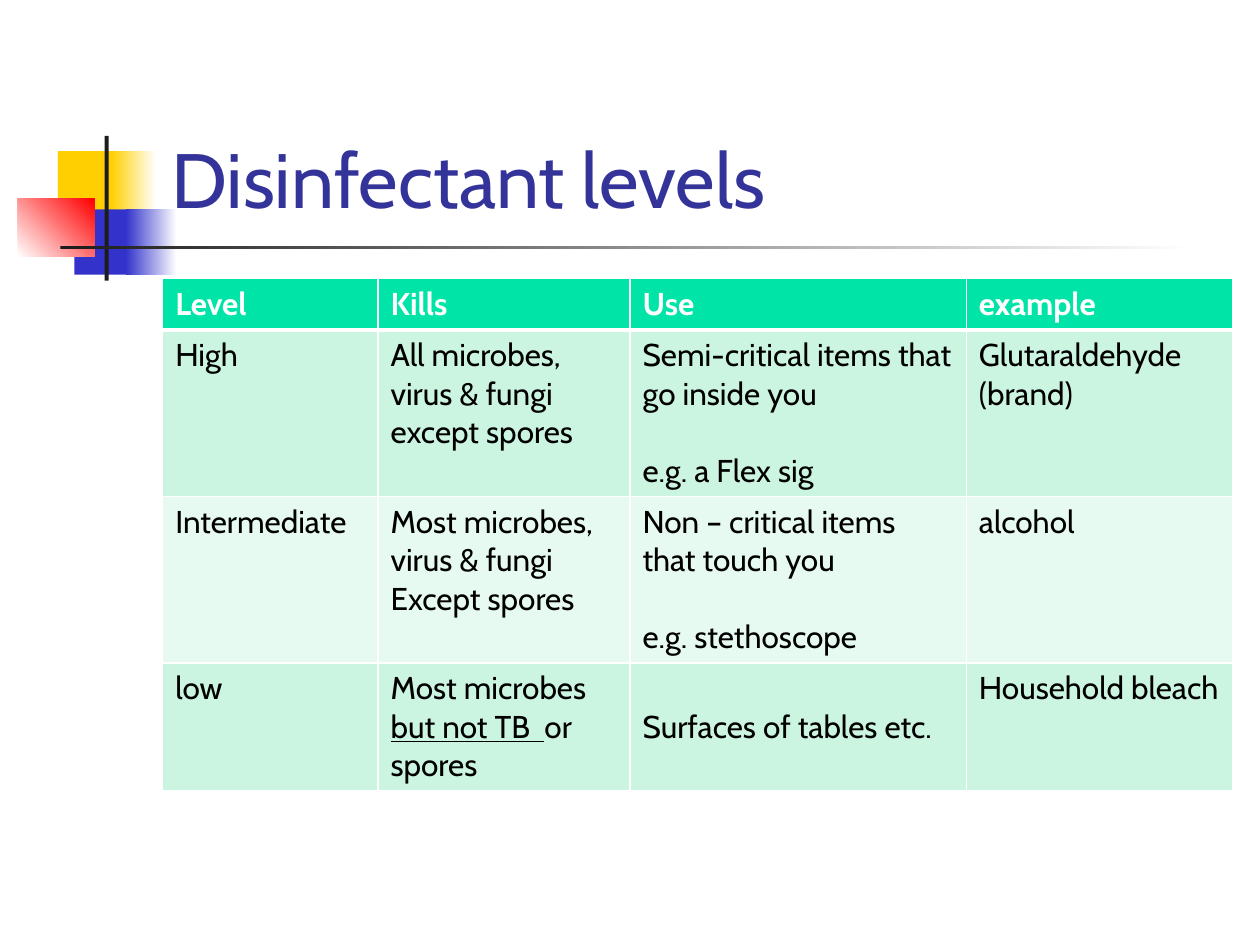
from lxml.etree import SubElement
from pptx import Presentation
from pptx.dml.color import RGBColor
from pptx.enum.shapes import MSO_SHAPE
from pptx.enum.text import MSO_ANCHOR, MSO_AUTO_SIZE, PP_ALIGN
from pptx.oxml.ns import qn
from pptx.util import Cm, Pt

FONT = "Cabin"
BLANK_LINE = Pt(22)
COLORS = {
    "yellow": "FFCF01", "blue": "3333CC", "red": "FF0000", "ink": "1C1C1C",
    "white": "FFFFFF", "black": "000000", "title": "333399",
    "header": "00E4A8", "band": "CCF5E1", "light_band": "E7FAF1",
}

# Each cell is a list of paragraphs; a paragraph is a list of (text, underline)
HEADERS = ["Level", "Kills", "Use", "example"]
ROWS = [
    ["High", "All microbes, virus & fungi except spores",
     ["Semi-critical items that go inside you", "e.g. a Flex sig"],
     ["Glutaraldehyde", "(brand)"]],
    ["Intermediate", ["Most microbes, virus & fungi", "Except spores"],
     ["Non – critical items that touch you", "e.g. stethoscope"], "alcohol"],
    ["low", [[("Most microbes ", False), ("but not TB  ", True), ("or spores", False)]],
     "Surfaces of tables etc.", "Household bleach"],
]
COLUMN_WIDTHS = [4.34, 5.08, 6.78, 5.38]
ROW_HEIGHTS = [1.04, 3.36, 3.36, 2.57]
USE_COLUMN = 2


def color(name):
    return RGBColor.from_string(COLORS[name])


def write(frame, content, size=18, fill="black", bold=False, gap=0):
    """Fill a text frame; gap is the space before each later paragraph."""
    paragraphs = content if isinstance(content, list) else [content]
    for index, spans in enumerate(paragraphs):
        para = frame.add_paragraph() if index else frame.paragraphs[0]
        para.alignment = PP_ALIGN.LEFT
        para.space_before = gap if index else Pt(0)
        for text, underline in [(spans, False)] if isinstance(spans, str) else spans:
            span = para.add_run()
            span.text = text
            font = span.font
            font.name, font.size, font.bold = FONT, Pt(size), bold
            font.underline = underline
            font.color.rgb = color(fill)


def add_block(page, box, start, end=None, angle=0):
    """Add a borderless rectangle, plain or fading from start to end."""
    block = page.shapes.add_shape(MSO_SHAPE.RECTANGLE, *map(Cm, box))
    block.shadow.inherit = False
    block.line.fill.background()
    if end is None:
        block.fill.solid()
        block.fill.fore_color.rgb = color(start)
        return
    block.fill.gradient()
    block.fill.gradient_angle = angle
    for stop, position, name in zip(block.fill.gradient_stops, (0, 1), (start, end)):
        stop.position = position
        stop.color.rgb = color(name)


def add_ornament(page, left, top):
    """Overlapping squares with a crossing bar and a fading rule."""
    blocks = [
        ((0.81, 0.31, 1.22, 1.32), "yellow"),
        ((1.88, 0.31, 0.91, 1.32), "yellow", "white"),
        ((1.14, 1.48, 1.17, 1.32), "blue"),
        ((2.18, 1.48, 1.02, 1.32), "blue", "white"),
        ((0, 1.27, 1.55, 1.17), "white", "red", 45),
        ((1.75, 0, 0.08, 2.92), "ink"),
        ((0.86, 2.21, 22.86, 0.08), "ink", "white"),
    ]
    for (x, y, width, height), *paint in blocks:
        add_block(page, (left + x, top + y, width, height), *paint)


def place_title(page, left, top, width, height):
    title = page.shapes.title
    title.left, title.top, title.width, title.height = map(Cm, (left, top, width, height))
    frame = title.text_frame
    frame.auto_size = MSO_AUTO_SIZE.NONE
    frame.vertical_anchor = MSO_ANCHOR.BOTTOM
    write(frame, "Disinfectant levels", size=44, fill="title")
    # Keep the title in front of the ornament
    page.shapes._spTree.append(title._element)


def style_cell(cell, fill, bottom_width=1):
    """White borders and a plain fill."""
    properties = cell._tc.get_or_add_tcPr()
    for side, width in (("L", 1), ("R", 1), ("T", 1), ("B", bottom_width)):
        line = SubElement(properties, qn(f"a:ln{side}"), w=str(Pt(width)))
        paint = SubElement(line, qn("a:solidFill"))
        SubElement(paint, qn("a:srgbClr"), val=COLORS["white"])
    cell.fill.solid()
    cell.fill.fore_color.rgb = color(fill)


def add_levels_table(page, left, top):
    width, height = sum(COLUMN_WIDTHS), sum(ROW_HEIGHTS)
    table = page.shapes.add_table(
        len(ROW_HEIGHTS), len(COLUMN_WIDTHS), *map(Cm, (left, top, width, height))).table
    for column, column_width in zip(table.columns, COLUMN_WIDTHS):
        column.width = Cm(column_width)
    for row, row_height in zip(table.rows, ROW_HEIGHTS):
        row.height = Cm(row_height)

    # Header row
    for cell, text in zip(table.rows[0].cells, HEADERS):
        style_cell(cell, "header", bottom_width=3)
        write(cell.text_frame, text, fill="white", bold=True)

    # Banded body rows
    for number, contents in enumerate(ROWS, start=1):
        for index, content in enumerate(contents):
            cell = table.cell(number, index)
            style_cell(cell, "band" if number % 2 else "light_band")
            write(cell.text_frame, content, gap=BLANK_LINE if index == USE_COLUMN else Pt(0))

    # The last use starts one line lower
    lowered = table.cell(len(ROWS), USE_COLUMN)
    lowered.margin_top = lowered.margin_top + BLANK_LINE


def main():
    deck = Presentation()
    deck.slide_width, deck.slide_height = Cm(25.4), Cm(19.05)
    page = deck.slides.add_slide(deck.slide_layouts.get_by_name("Title Only"))
    add_ornament(page, 0.36, 2.74)
    place_title(page, 3.2, 0.58, 21.64, 4.06)
    add_levels_table(page, 3.28, 5.61)
    deck.save("out.pptx")


if __name__ == "__main__":
    main()
